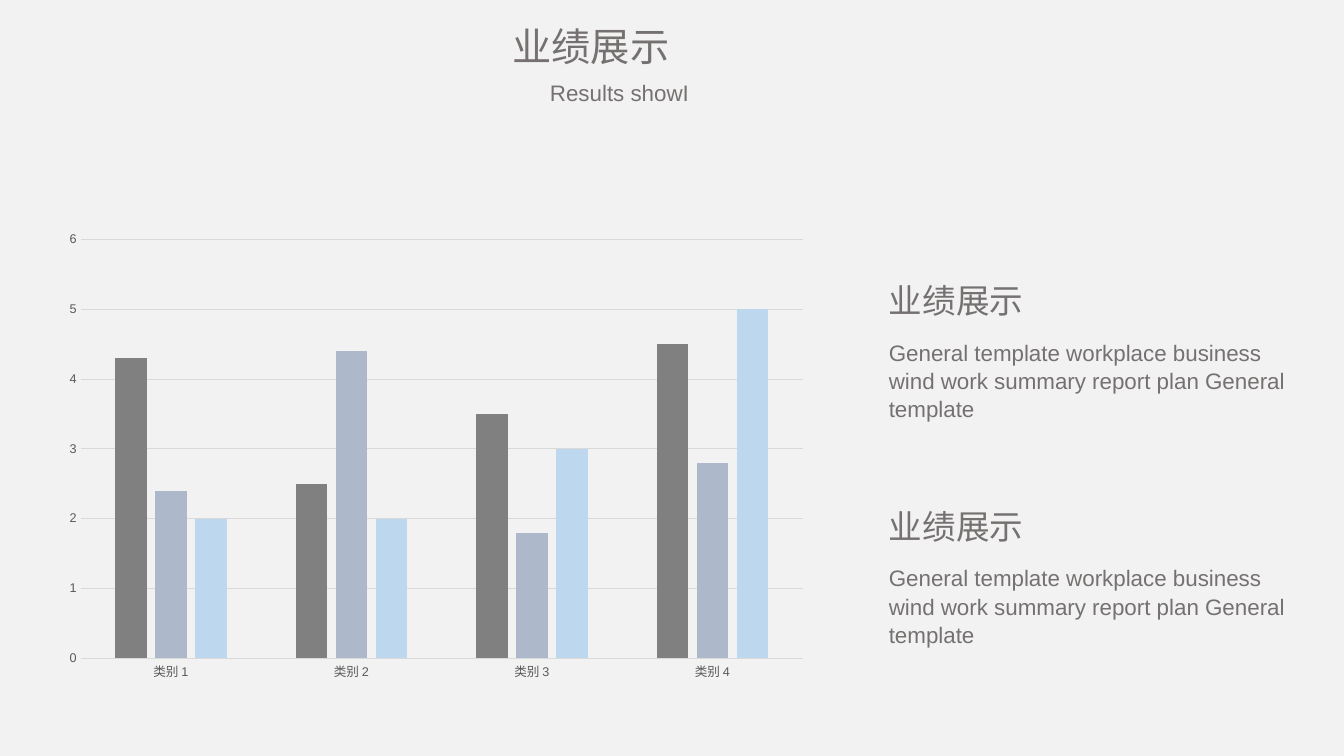
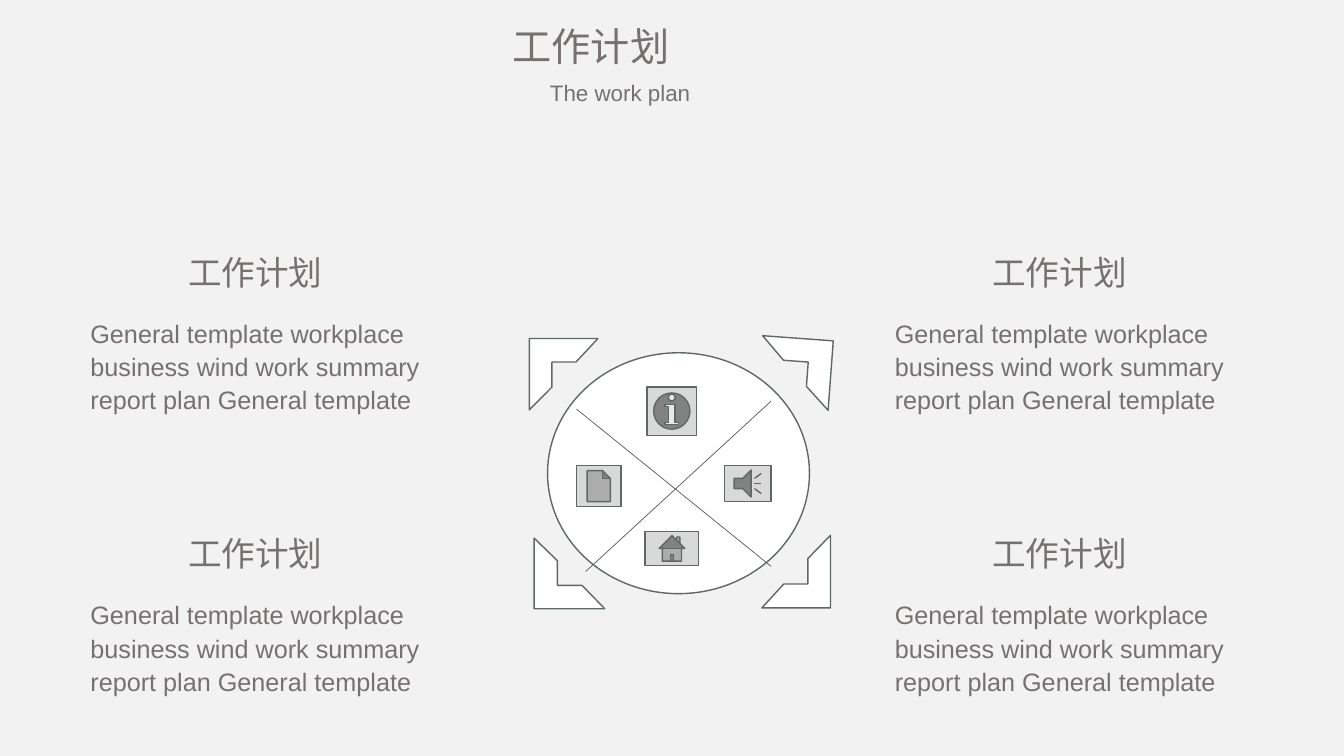
from itertools import product
from lxml.etree import SubElement
from pptx import Presentation
from pptx.chart.data import CategoryChartData
from pptx.dml.color import RGBColor
from pptx.enum.chart import XL_CHART_TYPE, XL_TICK_MARK
from pptx.enum.shapes import MSO_CONNECTOR, MSO_SHAPE
from pptx.enum.text import MSO_AUTO_SIZE
from pptx.oxml import parse_xml
from pptx.oxml.ns import nsdecls, qn
from pptx.util import Cm, Pt

FONT = "Arial"
PAPER, INK, LABEL = "F2F2F2", "767171", "595959"
GRID, EDGE, WHITE = "D9D9D9", "616767", "FFFFFF"
BODY = ("General template workplace business wind work summary "
        "report plan General template")


def color(code):
    return RGBColor.from_string(code)


def paint(shape, fill):
    shape.shadow.inherit = False
    shape.fill.solid()
    shape.fill.fore_color.rgb = color(fill)
    shape.line.color.rgb = color(EDGE)
    shape.line.width = Pt(1)


def write(slide, words, box, size, space=None):
    frame = slide.shapes.add_textbox(*map(Cm, box)).text_frame
    frame.word_wrap = True
    frame.auto_size = MSO_AUTO_SIZE.SHAPE_TO_FIT_TEXT
    frame.text = words
    para = frame.paragraphs[0]
    para.line_spacing = space
    font = para.runs[0].font
    font.name, font.size = FONT, Pt(size)
    font.color.rgb = color(INK)


def start(deck, title, under):
    slide = deck.slides.add_slide(deck.slide_layouts[6])
    back = slide.background.fill
    back.solid()
    back.fore_color.rgb = color(PAPER)
    write(slide, title, (12.67, 0.43, 8.2, 1.45), 28)
    write(slide, under, (13.61, 1.88, 6.32, 0.94), 16)
    return slide


def topic(slide, title, box, inset, drop, size, space):
    left, top, width, height = box
    write(slide, title, (left + inset, top, 7.06, 1.27), 24)
    write(slide, BODY, (left, top + drop, width, height - drop), size, space)


def style_axis(axis):
    axis.major_tick_mark = axis.minor_tick_mark = XL_TICK_MARK.NONE
    font = axis.tick_labels.font
    font.name, font.size = FONT, Pt(9)
    font.color.rgb = color(LABEL)


def style_line(line):
    line.color.rgb = color(GRID)
    line.width = Pt(0.75)


def place_plot(chart, **spots):
    area = chart.plots[0]._element.getparent()
    for old in area.findall(qn("c:layout")):
        area.remove(old)
    outer = parse_xml(f'<c:layout {nsdecls("c")}/>')
    area.insert(0, outer)
    layout = SubElement(outer, qn("c:manualLayout"))
    SubElement(layout, qn("c:layoutTarget")).set("val", "inner")
    for mode in ("xMode", "yMode"):
        SubElement(layout, qn(f"c:{mode}")).set("val", "edge")
    for name, spot in spots.items():
        SubElement(layout, qn(f"c:{name}")).set("val", str(spot))


def bars(slide, box):
    data = CategoryChartData()
    data.categories = [f"类别 {n}" for n in range(1, 5)]
    rows = [("808080", (4.3, 2.5, 3.5, 4.5)),
            ("ADB9CA", (2.4, 4.4, 1.8, 2.8)),
            ("BDD7EE", (2, 2, 3, 5))]
    for n, (_, vals) in enumerate(rows, 1):
        data.add_series(f"Series {n}", vals)
    chart = slide.shapes.add_chart(
        XL_CHART_TYPE.COLUMN_CLUSTERED, *map(Cm, box), data).chart
    chart.has_legend = chart.has_title = False
    chart.font.name, chart.font.size = FONT, Pt(10)
    chart.font.color.rgb = color("000000")
    plot = chart.plots[0]
    plot.gap_width, plot.overlap = 219, -27
    plot.vary_by_categories = False
    for series, (code, _) in zip(plot.series, rows):
        series.format.fill.solid()
        series.format.fill.fore_color.rgb = color(code)
    base, scale = chart.category_axis, chart.value_axis
    style_axis(base)
    style_axis(scale)
    style_line(base.format.line)
    style_line(scale.major_gridlines.format.line)
    scale.format.line.fill.background()
    scale.minimum_scale, scale.maximum_scale, scale.major_unit = 0, 6, 1
    place_plot(chart, x=0.03, y=0.15, w=0.97, h=0.77)


def bracket(slide, left, top, corner, across, down):
    steps = [(0, 0), (1, 0), (0.68, 0.33), (0.33, 0.33), (0.33, 0.68), (0, 1)]
    dots = [(Cm(left + corner[0] + a * across[0] + b * down[0]),
             Cm(top + corner[1] + a * across[1] + b * down[1]))
            for a, b in steps]
    pen = slide.shapes.build_freeform(*dots[0])
    pen.add_line_segments(dots[1:], close=True)
    paint(pen.convert_to_shape(), WHITE)


def wheel(slide, left, top):
    def put(kind, box, fill):
        x, y, width, height = box
        spot = (left + x, top + y, width, height)
        paint(slide.shapes.add_shape(kind, *map(Cm, spot)), fill)

    for corner, across, down in [
            ((0, 0.07), (1.73, 0), (0, 1.8)),
            ((7.66, 0.13), (-1.78, -0.13), (-0.13, 1.75)),
            ((7.59, 6.86), (-1.73, 0), (0, -1.83)),
            ((0.12, 6.88), (1.78, 0), (0, -1.78))]:
        bracket(slide, left, top, corner, across, down)
    put(MSO_SHAPE.OVAL, (0.46, 0.43, 6.6, 6.07), WHITE)
    for x, y, right, end in [(1.42, 5.94, 6.09, 1.65),
                             (1.19, 1.85, 6.09, 5.81)]:
        spoke = slide.shapes.add_connector(
            MSO_CONNECTOR.STRAIGHT, Cm(left + x), Cm(top + y),
            Cm(left + right), Cm(top + end))
        spoke.line.color.rgb = color(LABEL)
        spoke.line.width = Pt(0.5)
        SubElement(spoke._element.spPr, qn("a:effectLst"))
    for kind, box in [
            (MSO_SHAPE.ACTION_BUTTON_HOME, (2.92, 4.93, 1.35, 0.86)),
            (MSO_SHAPE.ACTION_BUTTON_INFORMATION, (2.97, 1.29, 1.24, 1.22)),
            (MSO_SHAPE.ACTION_BUTTON_SOUND, (4.92, 3.27, 1.17, 0.91)),
            (MSO_SHAPE.ACTION_BUTTON_DOCUMENT, (1.19, 3.27, 1.12, 1.04))]:
        put(kind, box, GRID)


def results(deck):
    title = "业绩展示"
    slide = start(deck, title, "Results showI")
    bars(slide, (1.47, 3.99, 18.77, 13.69))
    for top in (6.93, 12.62):
        topic(slide, title, (22.15, top, 11.13, 3.76), 0, 1.45, 16, 1.05)


def plan(deck):
    title = "工作计划"
    slide = start(deck, title, "The work plan")
    wheel(slide, 13.34, 8.46)
    for left, top in product((2.03, 22.3), (6.22, 13.31)):
        topic(slide, title, (left, top, 10.03, 4.24), 2.46, 1.6, 18, 1.1)


def main():
    deck = Presentation()
    deck.slide_width, deck.slide_height = Cm(33.87), Cm(19.05)
    results(deck)
    plan(deck)
    deck.save("out.pptx")


if __name__ == "__main__":
    main()
